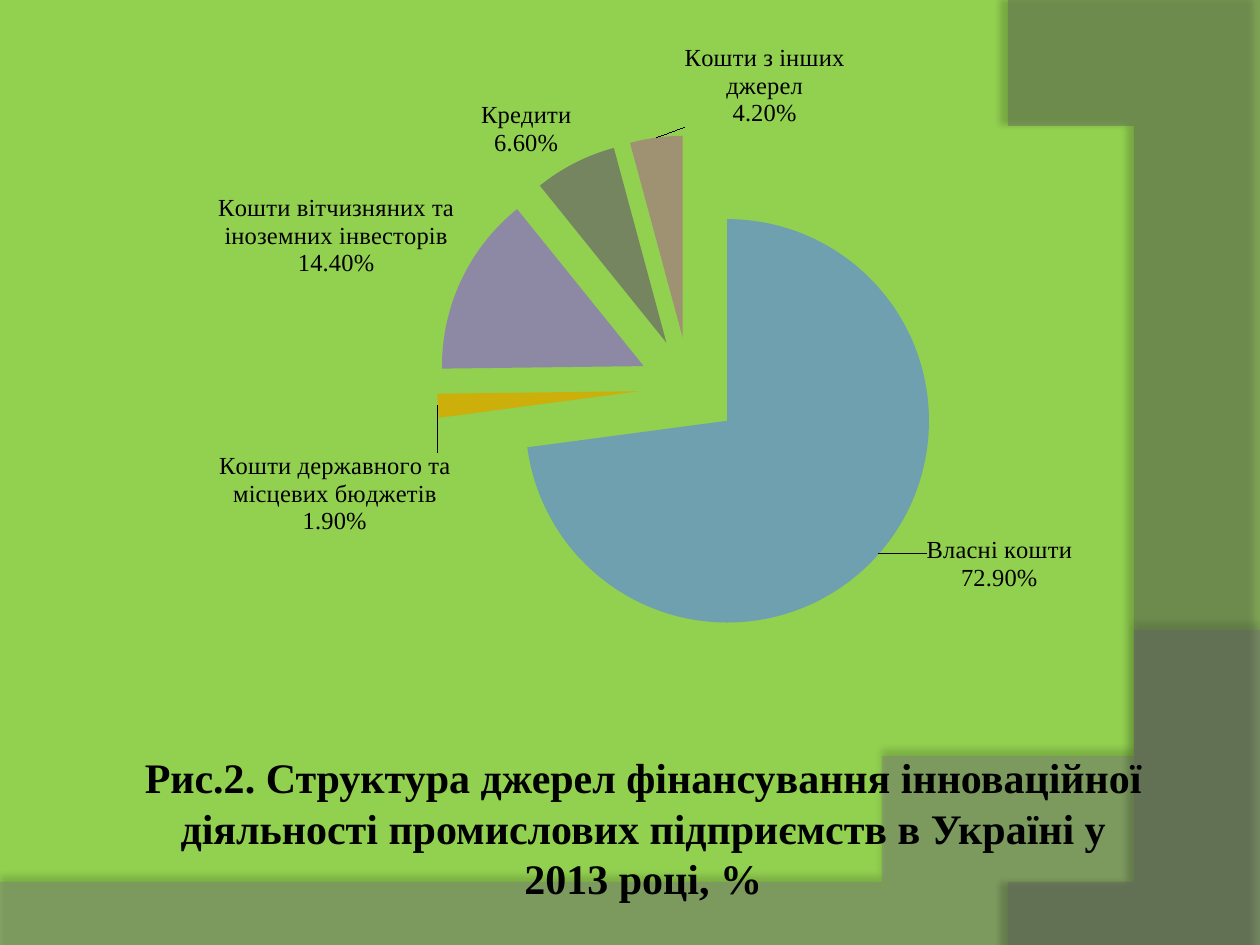
from dataclasses import dataclass

from lxml import etree
from pptx import Presentation
from pptx import util as u
from pptx.chart.data import CategoryChartData
from pptx.dml.color import RGBColor
from pptx.enum import chart as charts, text
from pptx.oxml import parse_xml
from pptx.oxml.ns import nsdecls, qn

FONT = "Times New Roman"
CURVE_STEPS = 40


@dataclass
class Wave:
    """Outline: straight corners, then one cubic curve from the last corner."""
    corners: list
    curve: list
    fill: str
    opacity: int
    shadow_opacity: int
    shadow_distance: float
    shadow_angle: int


@dataclass
class Source:
    name: str
    share: float
    fill: str
    label_shift: tuple | None = None  # shares of the chart's size


WAVES = [
    Wave([(0, 7.05), (0, 7.51), (10, 7.51), (10, 5.2)],
         [(5.59, 7.29), (3.91, 7.19), (0, 7.05)], "7F7F7F", 45, 35, 3.5, 270),
    Wave([(10, 0.02), (10, 7.5), (8.21, 7.5)],
         [(9.35, 6.19), (10.18, 3), (8, 0)], "5E5E5E", 40, 45, 4, 180),
]
SOURCES = [
    Source("Власні кошти", 72.9, "6EA0B0", (0.035, -0.034)),
    Source("Кошти державного та місцевих бюджетів", 1.9, "CCAF0A", (0.017, 0.135)),
    Source("Кошти вітчизняних та іноземних інвесторів", 14.4, "8D89A4"),
    Source("Кредити", 6.6, "748560"),
    Source("Кошти з інших джерел", 4.2, "9E9273", (0.158, -0.005)),
]


def color(value: str) -> RGBColor:
    return RGBColor.from_string(value)


def bezier(points: list, t: float) -> tuple:
    weights = ((1 - t) ** 3, 3 * t * (1 - t) ** 2, 3 * t * t * (1 - t), t ** 3)
    return tuple(sum(w * p[axis] for w, p in zip(weights, points)) for axis in (0, 1))


def draw_wave(page, wave: Wave) -> None:
    control = [wave.corners[-1], *wave.curve]
    curve = [bezier(control, step / CURVE_STEPS) for step in range(1, CURVE_STEPS + 1)]
    builder = page.shapes.build_freeform(*wave.corners[0], scale=u.Inches(1))
    builder.add_line_segments(wave.corners[1:] + curve, close=True)
    shape = builder.convert_to_shape()
    shape.line.fill.background()
    shape.fill.solid()
    shape.fill.fore_color.rgb = color(wave.fill)
    fill = shape._element.spPr.find(qn("a:solidFill"))
    etree.SubElement(fill[0], qn("a:alpha"), val=str(wave.opacity * 1000))
    shape._element.spPr.append(parse_xml(
        f'<a:effectLst {nsdecls("a")}><a:outerShdw blurRad="{u.Pt(4)}" '
        f'dist="{u.Pt(wave.shadow_distance)}" dir="{wave.shadow_angle * 60000}" '
        f'algn="ctr" rotWithShape="0"><a:srgbClr val="000000">'
        f'<a:alpha val="{wave.shadow_opacity * 1000}"/></a:srgbClr>'
        f'</a:outerShdw></a:effectLst>'))


def manual_layout(**values: float):
    items = "".join(f'<c:{name} val="{value}"/>' for name, value in values.items())
    return parse_xml(f'<c:layout {nsdecls("c")}><c:manualLayout>{items}'
                     f'</c:manualLayout></c:layout>')


def shift_label(series, index: int, shift: tuple) -> None:
    series.points[index].data_label.position = charts.XL_LABEL_POSITION.OUTSIDE_END
    label = series._element.xpath(f'c:dLbls/c:dLbl[c:idx/@val="{index}"]')[0]
    layout = manual_layout(x=shift[0], y=shift[1])
    label.find(qn("c:idx")).addnext(layout)
    layout.addnext(parse_xml(
        f'<c:numFmt {nsdecls("c")} formatCode="0.00%" sourceLinked="0"/>'))
    for name, shown in (("showVal", "0"), ("showCatName", "1"), ("showPercent", "1")):
        label.find(qn(f"c:{name}")).set("val", shown)
    add_separator(label)


def add_separator(labels) -> None:
    """Put the name and the percentage on separate lines."""
    separator = parse_xml(f'<c:separator {nsdecls("c")}>\n</c:separator>')
    flags = [item for item in labels if item.tag in
             (qn("c:showPercent"), qn("c:showBubbleSize"))]
    flags[-1].addnext(separator)


def draw_pie(page) -> None:
    data = CategoryChartData()
    data.categories = [source.name for source in SOURCES]
    data.add_series("Series 1", [source.share for source in SOURCES])
    frame = page.shapes.add_chart(charts.XL_CHART_TYPE.PIE, u.Inches(0.23), u.Inches(0.23),
                                  u.Inches(9.53), u.Inches(5.13), data)
    chart = frame.chart
    chart.has_legend = False
    chart.has_title = False
    chart.font.name = FONT
    chart.font.size = u.Pt(14)
    chart.font.color.rgb = color("000000")
    plot_area = chart._chartSpace.chart.plotArea
    for old in plot_area.findall(qn("c:layout")):
        plot_area.remove(old)
    layout = manual_layout(x=0.34, y=0.16, w=0.42, h=0.79)
    layout[0].insert(0, parse_xml(f'<c:layoutTarget {nsdecls("c")} val="inner"/>'))
    for place, axis in enumerate("xy", 1):
        layout[0].insert(place, parse_xml(f'<c:{axis}Mode {nsdecls("c")} val="edge"/>'))
    plot_area.insert(0, layout)

    series = chart.plots[0].series[0]
    labels = series.data_labels
    labels.number_format = "0.00%"
    labels.number_format_is_linked = False
    labels.show_value = False
    labels.show_category_name = True
    labels.show_percentage = True
    labels.position = charts.XL_LABEL_POSITION.OUTSIDE_END
    add_separator(labels._element)
    for index, source in enumerate(SOURCES):
        fill = series.points[index].format.fill
        fill.solid()
        fill.fore_color.rgb = color(source.fill)
        if source.label_shift:
            shift_label(series, index, source.label_shift)
    series._element.find(qn("c:dPt")).addprevious(
        parse_xml(f'<c:explosion {nsdecls("c")} val="25"/>'))


def write_title(page) -> None:
    title = page.shapes.title
    title.left, title.top = u.Inches(1.02), u.Inches(5.94)
    title.width, title.height = u.Inches(8.17), u.Inches(1.25)
    box = title.text_frame
    box.text = ("Рис.2. Структура джерел фінансування інноваційної діяльності "
                "промислових підприємств в Україні у 2013 році, %")
    box.word_wrap = True
    box.auto_size = text.MSO_AUTO_SIZE.NONE
    box.vertical_anchor = text.MSO_ANCHOR.MIDDLE
    box.margin_left = box.margin_right = u.Inches(0.05)
    box.margin_top = box.margin_bottom = u.Inches(0.05)
    para = box.paragraphs[0]
    para.alignment = text.PP_ALIGN.CENTER
    font = para.runs[0].font
    font.name, font.size, font.bold = FONT, u.Pt(24), True
    font.color.rgb = color("000000")
    page.shapes._spTree.append(title._element)  # in front of the waves


def main() -> None:
    deck = Presentation()
    deck.slide_width, deck.slide_height = u.Inches(10), u.Inches(7.5)
    page = deck.slides.add_slide(deck.slide_layouts[5])
    page.background.fill.solid()
    page.background.fill.fore_color.rgb = color("92D050")
    for wave in WAVES:
        draw_wave(page, wave)
    write_title(page)
    draw_pie(page)
    deck.save("out.pptx")


if __name__ == "__main__":
    main()
